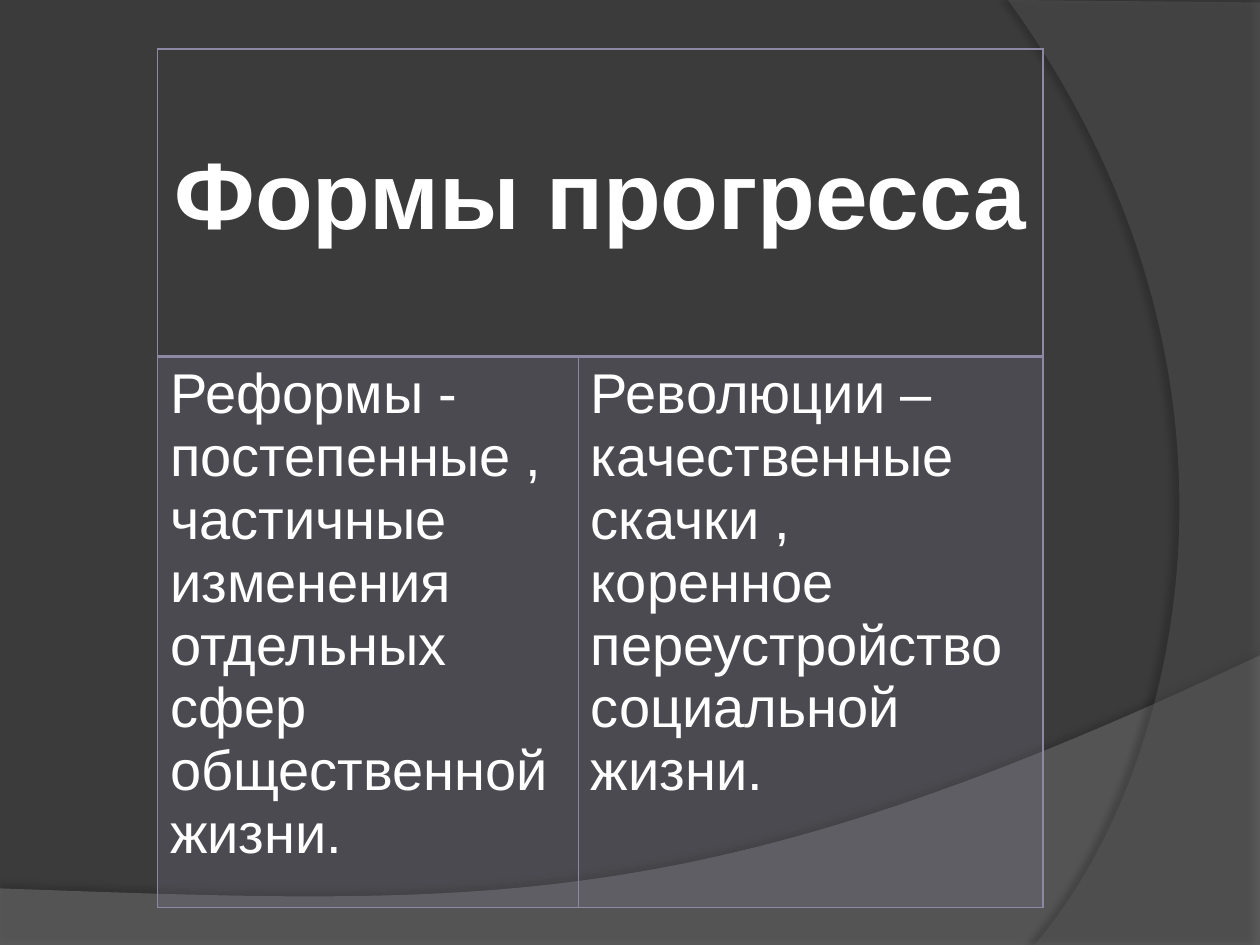
from dataclasses import dataclass

import pptx
import pptx.dml.color
import pptx.enum.text
import pptx.oxml
import pptx.oxml.ns
import pptx.util
from lxml import etree

Cm = pptx.util.Cm
Pt = pptx.util.Pt
Point = tuple[float, float]


@dataclass(frozen=True)
class Theme:
    background: str = "3B3B3B"
    wave: str = "7F7F7F"
    arc: str = "5E5E5E"
    accent: str = "8D89A4"
    text: str = "FFFFFF"
    shadow: str = "000000"
    font: str = "Arial"
    title_size: int = 54
    body_size: int = 32


@dataclass(frozen=True)
class Shadow:
    opacity: int
    distance: float
    direction: int
    blur: float = 4


@dataclass(frozen=True)
class Ribbon:
    corners: tuple[Point, ...]
    curve: tuple[Point, Point, Point]
    color: str
    opacity: int
    shadow: Shadow


@dataclass(frozen=True)
class CellText:
    row: int
    column: int
    text: str
    size: int
    bold: bool = False
    centered: bool = False
    top_margin: float = 0.13
    fill_opacity: int = 0
    bottom_border: float = 1


THEME = Theme()
SLIDE_WIDTH, SLIDE_HEIGHT = 25.4, 19.05
CURVE_STEPS = 60

RIBBONS = (
    Ribbon(((0, 17.91), (0, 19.08), (25.4, 19.08), (25.4, 13.21)),
           ((14.2, 18.52), (9.93, 18.26), (0, 17.91)),
           THEME.wave, 45, Shadow(35, 3.5, 270)),
    Ribbon(((25.4, 0.05), (25.4, 19.05), (20.85, 19.05)),
           ((23.75, 15.72), (25.86, 7.62), (20.32, 0)),
           THEME.arc, 40, Shadow(45, 4, 180)),
)

TABLE_LEFT, TABLE_TOP = 3.18, 0.99
COLUMN_WIDTHS = (8.48, 9.37)
ROW_HEIGHTS = (6.2, 11.1)
CELLS = (
    CellText(0, 0, "Формы прогресса", THEME.title_size, bold=True,
             centered=True, top_margin=1.91, bottom_border=2),
    CellText(1, 0, "Реформы - постепенные , частичные изменения отдельных "
                   "сфер общественной жизни.",
             THEME.body_size, fill_opacity=20),
    CellText(1, 1, "Революции – качественные скачки , коренное "
                   "переустройство социальной жизни.",
             THEME.body_size, fill_opacity=20),
)


def rgb(color: str) -> pptx.dml.color.RGBColor:
    return pptx.dml.color.RGBColor.from_string(color)


def add_color(parent, color: str, opacity: int = 100) -> None:
    node = etree.SubElement(parent, pptx.oxml.ns.qn("a:srgbClr"), val=color)
    if opacity < 100:
        etree.SubElement(node, pptx.oxml.ns.qn("a:alpha"), val=str(opacity * 1000))


def set_fill(fill, color: str, opacity: int, properties) -> None:
    fill.solid()
    fill.fore_color.rgb = rgb(color)
    node = properties.find(pptx.oxml.ns.qn("a:solidFill"))[0]
    etree.SubElement(node, pptx.oxml.ns.qn("a:alpha"), val=str(opacity * 1000))


def bezier(start: Point, curve: tuple[Point, Point, Point]) -> list[Point]:
    points = []
    for step in range(1, CURVE_STEPS + 1):
        t = step / CURVE_STEPS
        weights = ((1 - t) ** 3, 3 * t * (1 - t) ** 2, 3 * t * t * (1 - t), t ** 3)
        points.append(tuple(
            sum(weight * point[axis] for weight, point in zip(weights, (start, *curve)))
            for axis in (0, 1)))
    return points


def add_shadow(shape, shadow: Shadow) -> None:
    shape.shadow.inherit = False
    effects = shape._element.spPr.find(pptx.oxml.ns.qn("a:effectLst"))
    outer = etree.SubElement(
        effects, pptx.oxml.ns.qn("a:outerShdw"), blurRad=str(Pt(shadow.blur)),
        dist=str(Pt(shadow.distance)), dir=str(shadow.direction * 60000),
        algn="ctr", rotWithShape="0")
    add_color(outer, THEME.shadow, shadow.opacity)


def add_ribbon(page, ribbon: Ribbon) -> None:
    outline = [*ribbon.corners, *bezier(ribbon.corners[-1], ribbon.curve)]
    vertices = [(Cm(x), Cm(y)) for x, y in outline]
    builder = page.shapes.build_freeform(*vertices[0])
    builder.add_line_segments(vertices[1:], close=True)
    shape = builder.convert_to_shape()
    set_fill(shape.fill, ribbon.color, ribbon.opacity, shape._element.spPr)
    shape.line.fill.background()
    add_shadow(shape, ribbon.shadow)


def set_borders(cell, bottom: float) -> None:
    properties = cell._tc.get_or_add_tcPr()
    widths = {"a:lnL": 1, "a:lnR": 1, "a:lnT": 1, "a:lnB": bottom}
    for position, (tag, width) in enumerate(widths.items()):
        line = pptx.oxml.parse_xml(f"<{tag} {pptx.oxml.ns.nsdecls('a')}/>")
        line.set("w", str(Pt(width)))
        solid = etree.SubElement(line, pptx.oxml.ns.qn("a:solidFill"))
        add_color(solid, THEME.accent)
        properties.insert(position, line)


def write_cell(table, content: CellText) -> None:
    cell = table.cell(content.row, content.column)
    cell.margin_left = cell.margin_right = Cm(0.25)
    cell.margin_top, cell.margin_bottom = Cm(content.top_margin), Cm(0.13)
    cell.text = content.text
    para = cell.text_frame.paragraphs[0]
    if content.centered:
        para.alignment = pptx.enum.text.PP_ALIGN.CENTER
    para.font.name = THEME.font
    para.font.size = Pt(content.size)
    para.font.bold = content.bold
    para.font.color.rgb = rgb(THEME.text)
    if content.fill_opacity:
        set_fill(cell.fill, THEME.accent, content.fill_opacity,
                 cell._tc.get_or_add_tcPr())


def add_forms_table(page) -> None:
    table = page.shapes.add_table(
        len(ROW_HEIGHTS), len(COLUMN_WIDTHS), Cm(TABLE_LEFT), Cm(TABLE_TOP),
        Cm(sum(COLUMN_WIDTHS)), Cm(sum(ROW_HEIGHTS))).table
    table.first_row = table.horz_banding = False
    for column, width in zip(table.columns, COLUMN_WIDTHS):
        column.width = Cm(width)
    for row, height in zip(table.rows, ROW_HEIGHTS):
        row.height = Cm(height)
    table.cell(0, 0).merge(table.cell(0, 1))
    for cell in table.iter_cells():
        cell.fill.background()
    for content in CELLS:
        write_cell(table, content)
    for row, bottom in enumerate((2, 1)):
        for column in range(len(COLUMN_WIDTHS)):
            set_borders(table.cell(row, column), bottom)


def main() -> None:
    deck = pptx.Presentation()
    deck.slide_width, deck.slide_height = Cm(SLIDE_WIDTH), Cm(SLIDE_HEIGHT)
    page = deck.slides.add_slide(deck.slide_layouts[6])
    page.background.fill.solid()
    page.background.fill.fore_color.rgb = rgb(THEME.background)
    for ribbon in RIBBONS:
        add_ribbon(page, ribbon)
    add_forms_table(page)
    deck.save("out.pptx")


if __name__ == "__main__":
    main()
